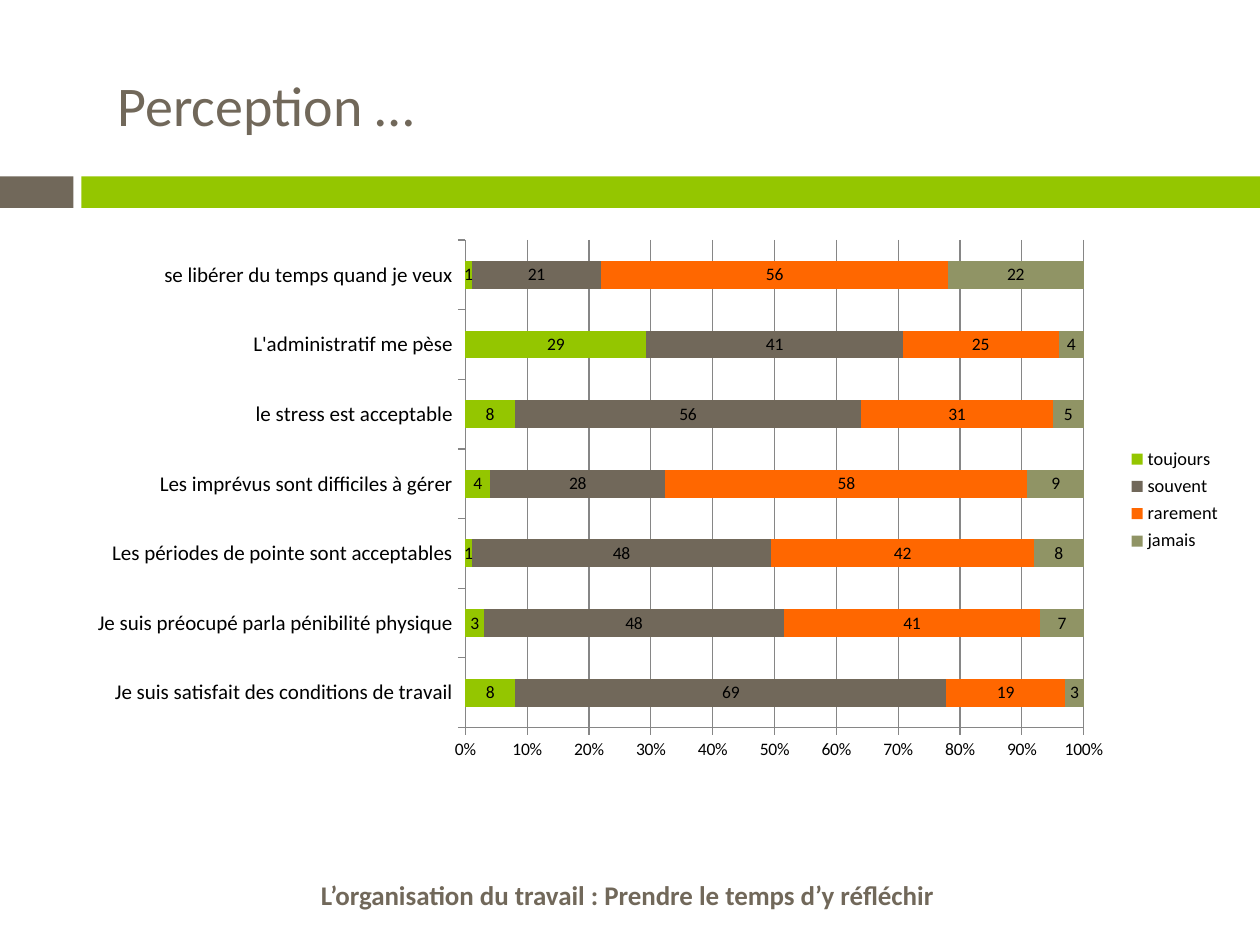
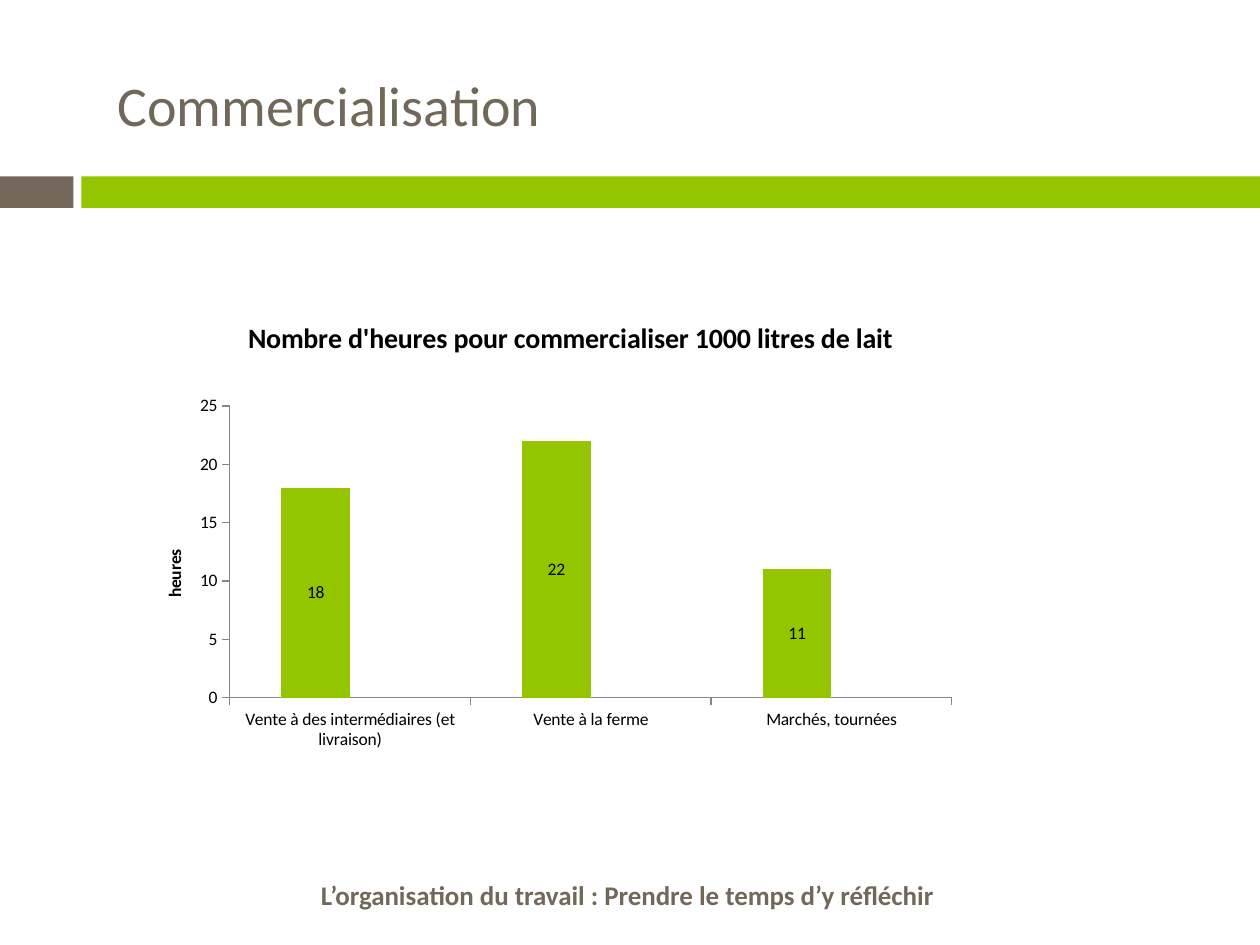
from dataclasses import dataclass

from lxml import etree
from pptx import Presentation
from pptx.chart.data import CategoryChartData as ChartData
from pptx.dml.color import RGBColor as RGB
from pptx.enum.chart import XL_CHART_TYPE as CT, XL_LABEL_POSITION as LabelPos
from pptx.enum.chart import XL_LEGEND_POSITION as LegendPos, XL_TICK_MARK as Tick
from pptx.enum.shapes import MSO_SHAPE as Shape
from pptx.enum.text import MSO_ANCHOR as Anchor, PP_ALIGN as Align
from pptx.oxml.ns import qn
from pptx.util import Pt


@dataclass(frozen=True)
class Theme:
    font: str = "Calibri"
    green: RGB = RGB(0x94, 0xC6, 0x00)
    brown: RGB = RGB(0x71, 0x68, 0x5A)
    orange: RGB = RGB(0xFF, 0x67, 0x00)
    olive: RGB = RGB(0x90, 0x94, 0x65)
    black: RGB = RGB(0, 0, 0)
    grey: RGB = RGB(0x86, 0x86, 0x86)
    title: float = 32
    footer: float = 15.4
    chart_title: float = 16
    category: float = 12
    legend: float = 10.5
    label: float = 10


th = Theme()
FOOTER = "L’organisation du travail : Prendre le temps d’y réfléchir"


def style(font, size, color=th.black, bold=False):
    values = {"name": th.font, "size": Pt(size), "bold": bold}
    for name, value in values.items():
        setattr(font, name, value)
    font.color.rgb = color


def place(element, index, **layout):
    """Give a chart part a manual layout, in fractions of the chart."""
    for old in element.findall(qn("c:layout")):
        element.remove(old)
    box = etree.Element(qn("c:layout"))
    manual = etree.SubElement(box, qn("c:manualLayout"))
    for tag, value in layout.items():
        etree.SubElement(manual, qn("c:" + tag), val=str(value))
    element.insert(index, box)


slides = [
    {
        "title": "Perception …",
        "type": CT.BAR_STACKED_100,
        "at": (42.5, 131, 663, 309.6),
        "plot": (0.337, 0.02, 0.533, 0.9),
        "cats": [
            "Je suis satisfait des conditions de travail",
            "Je suis préocupé parla pénibilité physique",
            "Les périodes de pointe sont acceptables",
            "Les imprévus sont difficiles à gérer",
            "le stress est acceptable",
            "L'administratif me pèse",
            "se libérer du temps quand je veux",
        ],
        "series": {
            "toujours": (8, 3, 1, 4, 8, 29, 1),
            "souvent": (69, 48, 48, 28, 56, 41, 21),
            "rarement": (19, 41, 42, 58, 31, 25, 56),
            "jamais": (3, 7, 8, 9, 5, 4, 22),
        },
        "cat_size": th.category,
        "stacked": True,
    },
    {
        "title": "Commercialisation",
        "type": CT.COLUMN_CLUSTERED,
        "at": (82, 136.8, 473.8, 302.4),
        "plot": (0.104, 0.315, 0.871, 0.551),
        "cats": ["Vente à des intermédiaires (et livraison)",
                 "Vente à la ferme", "Marchés, tournées"],
        "series": {"Series 1": (18, 22, 11), "Series 2": (None, None, None)},
        "cat_size": th.label,
        "stacked": False,
        "chart_title": "Nombre d'heures pour commercialiser 1000 litres de lait",
        "value_title": "heures",
    },
]

prs = Presentation()
prs.slide_width, prs.slide_height = Pt(720), Pt(540)

for info in slides:
    s = prs.slides.add_slide(prs.slide_layouts[6])

    # Band under the title
    for left, width, color in ((0, 42, th.brown), (46.5, 673.5, th.green)):
        sp = s.shapes.add_shape(Shape.RECTANGLE, Pt(left), Pt(100.8), Pt(width), Pt(18))
        sp.shadow.inherit = False
        sp.fill.solid()
        sp.fill.fore_color.rgb = color
        sp.line.fill.background()

    # Title and footer
    texts = (
        (info["title"], (60, 36.7, 635, 104.4), th.title, False, {}, {}),
        (FOOTER, (0, 496.8, 717, 26.6), th.footer, True,
         {"vertical_anchor": Anchor.BOTTOM, "margin_top": Pt(10)},
         {"alignment": Align.CENTER, "line_spacing": 0.7}),
    )
    for text, at, size, bold, frame_format, par_format in texts:
        tf = s.shapes.add_textbox(*map(Pt, at)).text_frame
        tf.word_wrap = True
        p = tf.paragraphs[0]
        for target, values in ((tf, frame_format), (p, par_format)):
            for name, value in values.items():
                setattr(target, name, value)
        r = p.add_run()
        r.text = text
        style(r.font, size, th.brown, bold)

    # Chart
    data = ChartData(number_format="0")
    data.categories = info["cats"]
    for name, values in info["series"].items():
        data.add_series(name, values)
    chart = s.shapes.add_chart(info["type"], *map(Pt, info["at"]), data).chart
    style(chart.font, th.label)
    x, y, w, h = info["plot"]
    place(chart._chartSpace.chart.plotArea, 0, layoutTarget="inner",
          xMode="edge", yMode="edge", x=x, y=y, w=w, h=h)

    # Bars and their values
    plot = chart.plots[0]
    plot.gap_width = 150
    plot.overlap = 100 if info["stacked"] else 0
    plot.vary_by_categories = False
    for series, color in zip(plot.series, (th.green, th.brown, th.orange, th.olive)):
        series.format.fill.solid()
        series.format.fill.fore_color.rgb = color
        labels = series.data_labels
        labels.show_value = True
        labels.position = LabelPos.CENTER
        labels.number_format = "0"
        labels.number_format_is_linked = False
        style(labels.font, th.label)

    # Axes
    cat_axis, val_axis = chart.category_axis, chart.value_axis
    for axis, size in ((cat_axis, info["cat_size"]), (val_axis, th.label)):
        axis.major_tick_mark = Tick.OUTSIDE
        axis.minor_tick_mark = Tick.NONE
        axis.format.line.color.rgb = th.grey
        axis.format.line.width = Pt(0.75)
        style(axis.tick_labels.font, size)
    val_axis.has_major_gridlines = info["stacked"]
    val_axis.tick_labels.number_format = "0%" if info["stacked"] else "0"
    val_axis.tick_labels.number_format_is_linked = False

    # Legend, or titles of the chart and its value axis
    chart.has_legend = info["stacked"]
    chart.has_title = not info["stacked"]
    if info["stacked"]:
        val_axis.major_gridlines.format.line.color.rgb = th.grey
        val_axis.major_gridlines.format.line.width = Pt(0.75)
        chart.legend.position = LegendPos.RIGHT
        chart.legend.include_in_layout = False
        style(chart.legend.font, th.legend)
    else:
        val_axis.minimum_scale, val_axis.maximum_scale, val_axis.major_unit = 0, 25, 5
        headings = (
            (chart.chart_title, info["chart_title"], th.chart_title, 0.12, 0.14),
            (val_axis.axis_title, info["value_title"], th.label, 0.02, 0.58),
        )
        for heading, text, size, x, y in headings:
            r = heading.text_frame.paragraphs[0].add_run()
            r.text = text
            style(r.font, size, bold=True)
            place(heading._element, 1, xMode="edge", yMode="edge", x=x, y=y)

prs.save("out.pptx")
